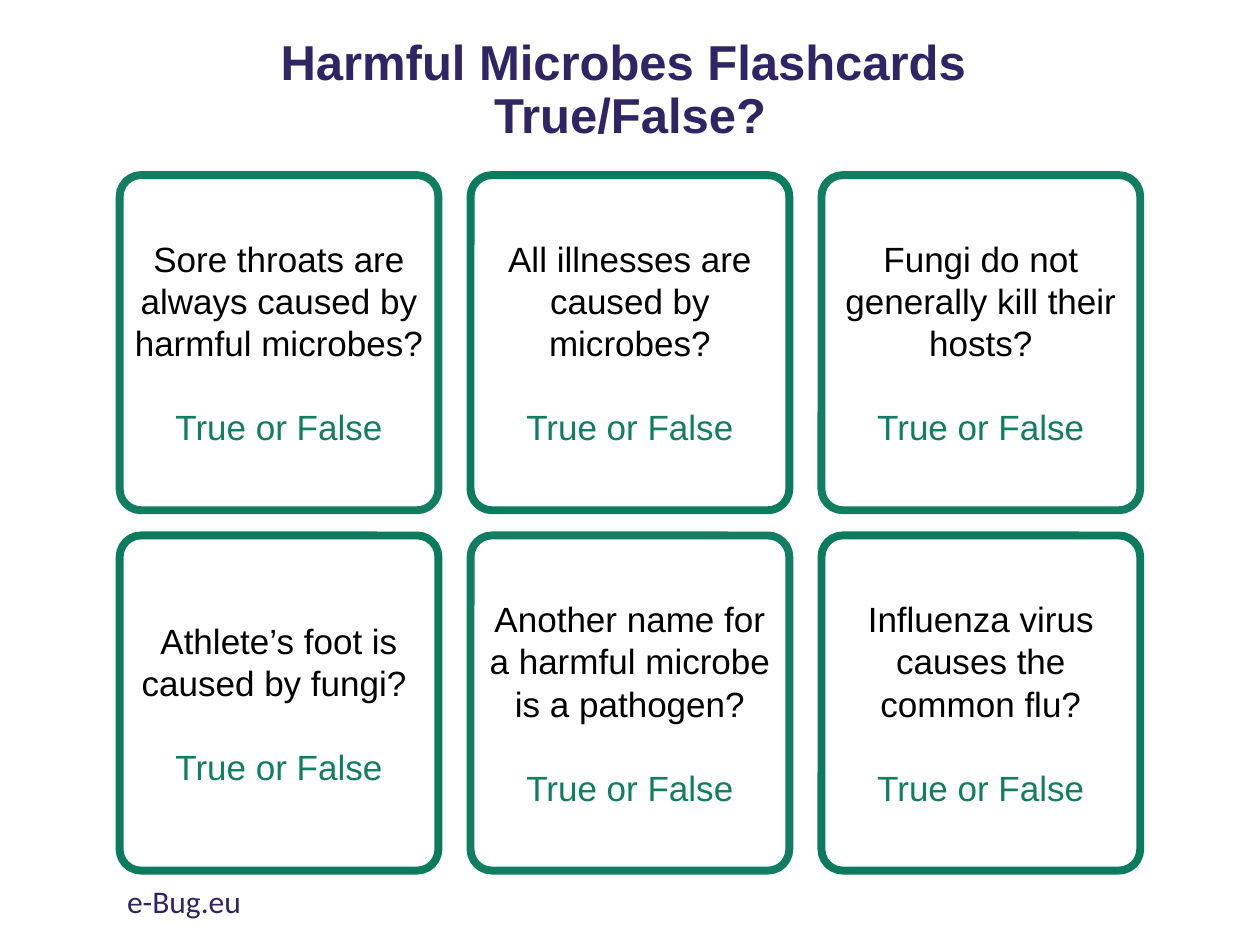
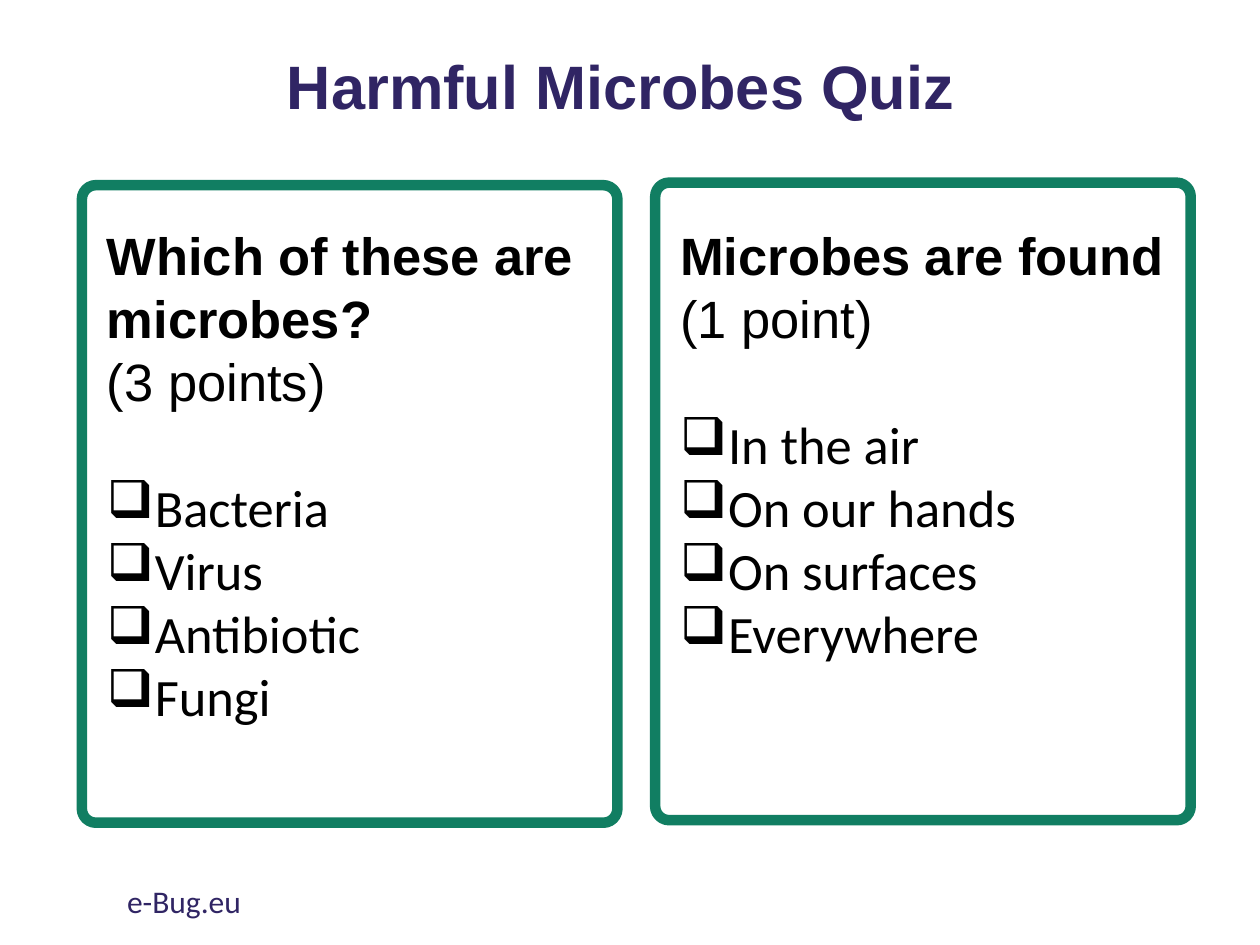
from lxml import etree
from pptx import Presentation
from pptx.dml.color import RGBColor
from pptx.enum.shapes import MSO_SHAPE
from pptx.enum.text import MSO_ANCHOR, MSO_AUTO_SIZE, PP_ALIGN
from pptx.oxml.ns import qn
from pptx.util import Inches, Pt

ROUNDED = MSO_SHAPE.ROUNDED_RECTANGLE
MIDDLE, TOP = MSO_ANCHOR.MIDDLE, MSO_ANCHOR.TOP
CENTER, LEFT = PP_ALIGN.CENTER, PP_ALIGN.LEFT
NO_FIT = MSO_AUTO_SIZE.NONE

NAVY, GREEN, DEEP_GREEN, BLACK = "302564", "117E62", "0B7B5D", "000000"
HEAD_FONT, BODY_FONT = "Arial", "Calibri"
TITLE_ONLY = 5

CARD_LEFT, CARD_TOP, CARD_WIDTH, CARD_HEIGHT = 0.95, 1.39, 2.53, 2.66
CARD_STEP, ROW_STEP, COLUMNS = 2.785, 2.86, 3
PANEL_LEFT, PANEL_TOP, PANEL_WIDTH, PANEL_HEIGHT = 0.65, 1.47, 4.25, 5.06
PANEL_STEP, PANEL_RISE = 4.55, 0.02
ANSWER_INDENT = 0.38

STATEMENTS = [
    "Sore throats are always caused by harmful microbes?",
    "All illnesses are caused by microbes?",
    "Fungi do not generally kill their hosts?",
    "Athlete’s foot is caused by fungi? ",
    "Another name for a harmful microbe is a pathogen?",
    "Influenza virus causes the common flu?",
]
QUESTIONS = [
    ("Which of these are microbes?", "(3 points)",
     ["Bacteria", "Virus", "Antibiotic", "Fungi"]),
    ("Microbes are found", "(1 point)",
     ["In the air", "On our hands", "On surfaces", "Everywhere"]),
]


def color(value):
    """Turn a hex string into a colour."""
    return RGBColor.from_string(value)


def assign(target, values):
    """Set each attribute named in a dict."""
    for name, value in values.items():
        setattr(target, name, value)


def place(shape, left, top, width, height):
    """Move and size a shape, in inches."""
    assign(shape, {"left": Inches(left), "top": Inches(top),
                   "width": Inches(width), "height": Inches(height)})


def set_frame(shape, anchor, inset=0.1):
    """Prepare the text frame of a shape."""
    frame = shape.text_frame
    assign(frame, {"word_wrap": True, "auto_size": NO_FIT, "vertical_anchor": anchor,
                   "margin_left": Inches(inset), "margin_right": Inches(inset),
                   "margin_top": Inches(0.05), "margin_bottom": Inches(0.05)})
    return frame


def add_bullet(para):
    """Give a paragraph a hanging tick box."""
    properties = para._p.get_or_add_pPr()
    properties.set("marL", str(Inches(ANSWER_INDENT)))
    properties.set("indent", str(-Inches(ANSWER_INDENT)))
    etree.SubElement(properties, qn("a:buChar")).set("char", "❑")


def write(frame, text, size, font=HEAD_FONT, ink=BLACK, bold=False,
          align=LEFT, spacing=None, before=0, bullet=False):
    """Write one formatted paragraph, using the empty first one if it is there."""
    first = frame.paragraphs[0]
    para = frame.add_paragraph() if first.runs else first
    if bullet:
        add_bullet(para)
    assign(para, {"alignment": align, "line_spacing": spacing, "space_before": Pt(before)})
    span = para.add_run()
    span.text = text
    assign(span.font, {"size": Pt(size), "name": font, "bold": bold})
    span.font.color.rgb = color(ink)


def add_text_box(page, left, top, width, height):
    """Add a wrapping text box and return its frame."""
    box = page.shapes.add_textbox(0, 0, 0, 0)
    place(box, left, top, width, height)
    return set_frame(box, TOP)


def add_outline(page, area, corner, ink, weight):
    """Add an unfilled rounded frame."""
    outline = page.shapes.add_shape(ROUNDED, 0, 0, 0, 0)
    place(outline, *area)
    outline.adjustments[0] = corner
    outline.shadow.inherit = False
    outline.fill.background()
    outline.line.color.rgb = color(ink)
    outline.line.width = Pt(weight)
    return outline


def add_page(deck, lines, area, size):
    """Add a slide with its title and the site footer."""
    page = deck.slides.add_slide(deck.slide_layouts[TITLE_ONLY])
    title = page.shapes.title
    place(title, *area)
    frame = set_frame(title, MIDDLE)
    for line in lines:
        write(frame, line, size, ink=NAVY, bold=True, align=CENTER, spacing=0.9)
    write(add_text_box(page, 0.91, 6.95, 3.38, 0.4), "e-Bug.eu", 18, BODY_FONT, NAVY)
    return page


def add_flashcard(page, index, statement):
    """Add one true or false card at its place in the grid."""
    row, column = divmod(index, COLUMNS)
    area = (CARD_LEFT + column * CARD_STEP, CARD_TOP + row * ROW_STEP,
            CARD_WIDTH, CARD_HEIGHT)
    ink = DEEP_GREEN if index % 2 else GREEN
    frame = set_frame(add_outline(page, area, 0.067, ink, 4.5), MIDDLE, 0.05)
    write(frame, statement, 20, align=CENTER)
    write(frame, "True or False", 20, ink=GREEN, align=CENTER, before=24)


def add_question(page, index, question, points, answers):
    """Add one quiz panel with its tick-box answers."""
    left = PANEL_LEFT + index * PANEL_STEP
    top = PANEL_TOP - index * PANEL_RISE
    add_outline(page, (left, top, PANEL_WIDTH, PANEL_HEIGHT), 0.026, GREEN, 6)
    frame = add_text_box(page, left + 0.1, 1.72, PANEL_WIDTH, 4.64)
    write(frame, question, 30, bold=True)
    write(frame, points, 30)
    for number, answer in enumerate(answers):
        write(frame, answer, 30, BODY_FONT, before=0 if number else 36, bullet=True)


def main():
    """Build the flashcards and the quiz."""
    deck = Presentation()
    assign(deck, {"slide_width": Inches(10), "slide_height": Inches(7.5)})
    cards = add_page(deck, ["Harmful Microbes Flashcards ", "True/False?"],
                     (0.69, 0, 8.62, 1.45), 28)
    for index, statement in enumerate(STATEMENTS):
        add_flashcard(cards, index, statement)
    quiz = add_page(deck, ["Harmful Microbes Quiz "], (0.34, 0.15, 9.31, 1.13), 35)
    for index, content in enumerate(QUESTIONS):
        add_question(quiz, index, *content)
    deck.save("out.pptx")


if __name__ == "__main__":
    main()
